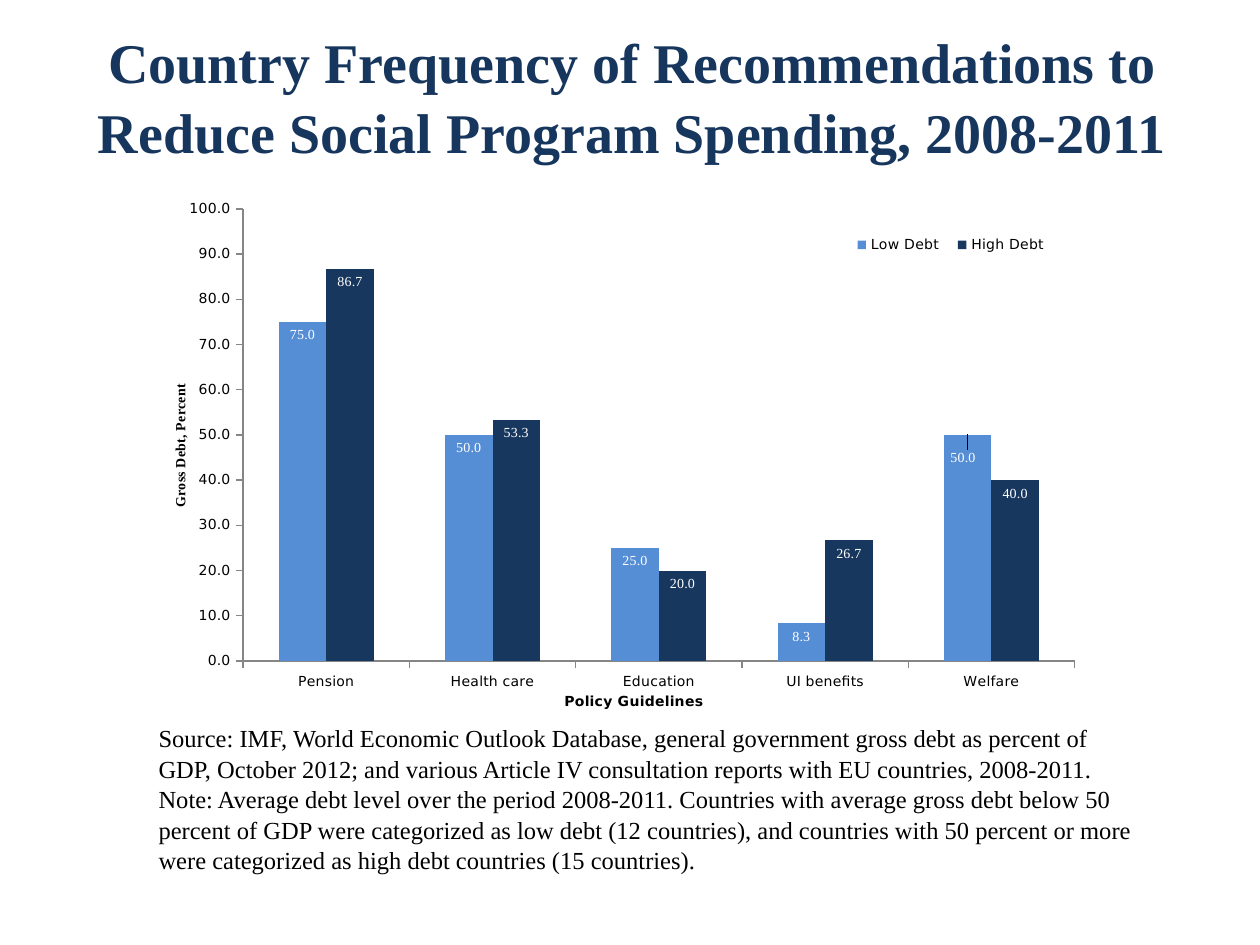
from lxml import etree
from pptx import Presentation
from pptx import util as u
from pptx.chart.data import CategoryChartData
from pptx.dml.color import RGBColor
from pptx.enum import chart as ch, text
from pptx.oxml import ns

COLORS = {"title": "17365D", "low": "558ED5", "high": "17375E",
          "text": "000000", "label": "FFFFFF", "axis": "868686"}
SERIF, SANS = "Times New Roman", "DejaVu Sans"
TITLE = ["Country Frequency of Recommendations to",
         "Reduce Social Program Spending, 2008-2011"]
SOURCE = (
    "Source: IMF, World Economic Outlook Database, general government gross "
    "debt as percent of GDP, October 2012; and various Article IV consultation "
    "reports with EU countries, 2008-2011. Note: Average debt level over the "
    "period 2008-2011. Countries with average gross debt below 50 percent of "
    "GDP were categorized as low debt (12 countries), and countries with 50 "
    "percent or more were categorized as high debt countries (15 countries).")
CATEGORIES = ["Pension", "Health care", "Education", "UI benefits", "Welfare"]
SERIES = [("Low Debt", "low", (75, 50, 25, 8.3, 50)),
          ("High Debt", "high", (86.7, 53.3, 20, 26.7, 40))]


def rgb(name):
    """Return the named palette colour."""
    return RGBColor.from_string(COLORS[name])


def add(parent, tag, **attrs):
    """Append a chart element with the given attributes."""
    el = etree.SubElement(parent, ns.qn("c:" + tag))
    for key, value in attrs.items():
        el.set(key, str(value))
    return el


def place(parent, after, edge=True, inner=False, **box):
    """Give a chart part a manual layout as fractions of the chart."""
    for old in parent.findall(ns.qn("c:layout")):
        parent.remove(old)
    layout = add(parent, "layout")
    manual = add(layout, "manualLayout")
    if inner:
        add(manual, "layoutTarget", val="inner")
    if edge:
        for mode in ("xMode", "yMode"):
            add(manual, mode, val="edge")
    for key, value in box.items():
        add(manual, key, val=value)
    if after:
        parent.find(ns.qn("c:" + after)).addnext(layout)
    else:
        parent.insert(0, layout)
    return layout


class Deck:
    """Holds the style and the current slide."""

    def __init__(self):
        """Start a one-slide deck."""
        self.prs = Presentation()
        self.prs.slide_width, self.prs.slide_height = u.Inches(10), u.Inches(7.5)
        self.s = self.prs.slides.add_slide(self.prs.slide_layouts[6])

    def style(self, font, color="text", **fmt):
        """Apply format values to a font."""
        for key, value in {"name": SERIF, "size": u.Pt(8), "bold": False, **fmt}.items():
            setattr(font, key, value)
        font.color.rgb = rgb(color)

    def text(self, box, lines, align=None, **fmt):
        """Add a text box with one paragraph for each line."""
        tf = self.s.shapes.add_textbox(*map(u.Inches, box)).text_frame
        tf.word_wrap = True
        tf.auto_size = text.MSO_AUTO_SIZE.SHAPE_TO_FIT_TEXT
        for i, line in enumerate(lines):
            p = tf.add_paragraph() if i else tf.paragraphs[0]
            p.alignment, p.line_spacing = align, 1.04
            r = p.add_run()
            r.text = line
            self.style(r.font, **fmt)

    def axis(self, axis, title, font, x, y):
        """Format an axis and place its title."""
        axis.has_major_gridlines = False
        axis.major_tick_mark = ch.XL_TICK_MARK.OUTSIDE
        axis.format.line.color.rgb = rgb("axis")
        self.style(axis.tick_labels.font, name=SANS)
        tf = axis.axis_title.text_frame
        tf.text = title
        self.style(tf.paragraphs[0].runs[0].font, name=font, bold=True)
        place(axis.axis_title._element, "tx", x=x, y=y)

    def series(self, ser, color):
        """Colour a series and show its values inside the bars."""
        ser.format.fill.solid()
        ser.format.fill.fore_color.rgb = rgb(color)
        labels = ser.data_labels
        labels.show_value = True
        labels.number_format, labels.number_format_is_linked = "0.0", False
        labels.position = ch.XL_LABEL_POSITION.INSIDE_END
        self.style(labels.font, color="label")

    def shift_label(self, ser, index, x, y):
        """Move one value label away from its usual position."""
        label = ser.points[index].data_label
        self.style(label.font, color="label")
        label.position = ch.XL_LABEL_POSITION.INSIDE_END
        el = ser._element.find(".//" + ns.qn("c:dLbl"))
        layout = place(el, "idx", edge=False, x=x, y=y)
        layout.addnext(add(el, "numFmt", formatCode="0.0", sourceLinked=0))

    def chart(self, box):
        """Add the clustered column chart."""
        data = CategoryChartData(number_format="0.0")
        data.categories = CATEGORIES
        for name, _, values in SERIES:
            data.add_series(name, values)
        chart = self.s.shapes.add_chart(
            ch.XL_CHART_TYPE.COLUMN_CLUSTERED, *map(u.Inches, box), data).chart
        self.style(chart.font)
        chart.has_title = False
        plot = chart.plots[0]
        plot.gap_width, plot.overlap, plot.vary_by_categories = 150, 0, False
        place(chart._chartSpace.chart.plotArea, None, inner=True,
              x=0.09, y=0.052, w=0.887, h=0.855)
        for ser, (_, color, _) in zip(plot.series, SERIES):
            self.series(ser, color)
        self.shift_label(plot.series[0], len(CATEGORIES) - 1, -0.005, 0.019)
        self.axis(chart.category_axis, "Policy Guidelines", SANS, 0.43, 0.96)
        value = chart.value_axis
        self.axis(value, "Gross Debt, Percent", SERIF, 0.01, 0.38)
        value.minimum_scale, value.maximum_scale, value.major_unit = 0, 100, 10
        value.tick_labels.number_format = "0.0"
        value.tick_labels.number_format_is_linked = False
        chart.has_legend = True
        legend = chart.legend
        legend.position = ch.XL_LEGEND_POSITION.TOP
        legend.include_in_layout = False
        self.style(legend.font, name=SANS)
        place(legend._element, "legendPos", x=0.73, y=0.09, w=0.23, h=0.06)


def main():
    """Build and save the slide."""
    deck = Deck()
    deck.text((0.52, 0.15, 9, 1.18), TITLE, text.PP_ALIGN.CENTER,
              color="title", size=u.Pt(32), bold=True)
    deck.chart((1.26, 1.44, 7.44, 4.23))
    deck.text((1.16, 5.68, 8.01, 1.28), [SOURCE], size=u.Pt(14))
    deck.prs.save("out.pptx")


if __name__ == "__main__":
    main()
